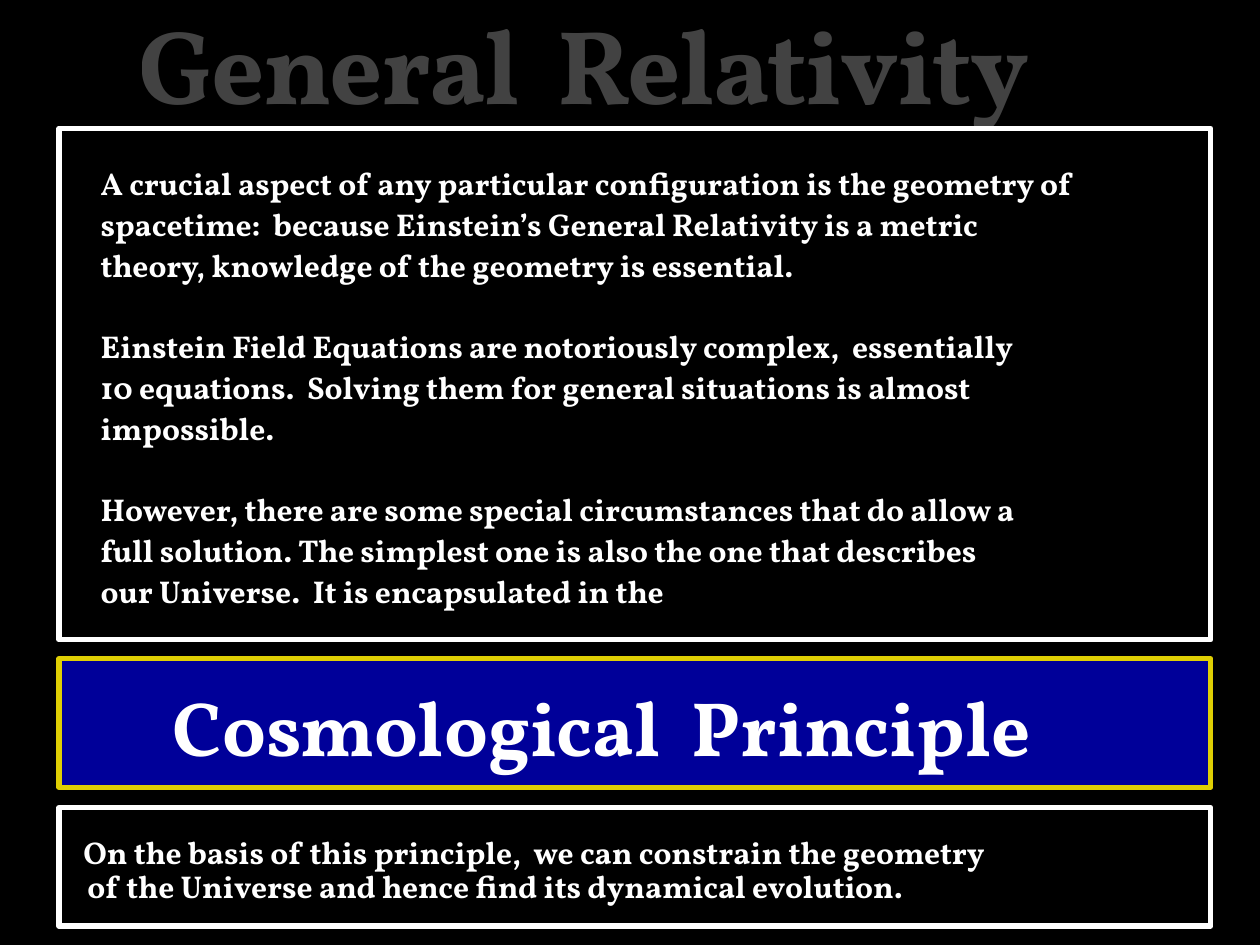
from pptx import Presentation
from pptx.dml.color import RGBColor
from pptx.enum import shapes as sh
from pptx.oxml import parse_xml
from pptx.oxml.ns import nsdecls
from pptx.util import Cm, Pt

BLACK = RGBColor(0x00, 0x00, 0x00)
WHITE = RGBColor(0xFF, 0xFF, 0xFF)
BLUE = RGBColor(0x00, 0x00, 0x99)
GOLD = RGBColor(0xDF, 0xCF, 0x04)

prs = Presentation()
prs.slide_width, prs.slide_height = Cm(25.4), Cm(19.05)
slide = prs.slides.add_slide(prs.slide_layouts[6])
slide.background.fill.solid()
slide.background.fill.fore_color.rgb = BLACK


def write(left, top, width, height, size, paras, pitch=None, gap=0):
    """Add a text box without insets; each paragraph is a list of lines."""
    box = slide.shapes.add_textbox(Cm(left), Cm(top), Cm(width), Cm(height))
    frame = box.text_frame
    frame.word_wrap = True
    frame.margin_left = frame.margin_right = 0
    frame.margin_top = frame.margin_bottom = 0
    for i, lines in enumerate(paras):
        para = frame.paragraphs[0] if i == 0 else frame.add_paragraph()
        if pitch:
            para.line_spacing = Pt(pitch)
        if i:
            para.space_before = Pt(gap)
        for j, line in enumerate(lines):
            if j:
                para.add_line_break()
            run = para.add_run()
            run.text = line
            run.font.name = "Vollkorn"
            run.font.size = Pt(size)
            run.font.bold = True
            run.font.color.rgb = WHITE
    return frame


# Faded title
title = write(2.79, 0, 21, 2.4, 60, [["General  Relativity"]])
props = title.paragraphs[0].runs[0].font._element
props.set("spc", "-100")
props.find(".//{*}srgbClr").append(
    parse_xml(f'<a:alpha {nsdecls("a")} val="25000"/>'))

# Framed panels: top, height, line, fill
panels = [
    (2.59, 10.31, WHITE, None),
    (13.28, 2.59, GOLD, BLUE),
    (16.28, 2.39, WHITE, None),
]
for top, height, line, fill in panels:
    panel = slide.shapes.add_shape(
        sh.MSO_SHAPE.RECTANGLE, Cm(1.19), Cm(top), Cm(23.22), Cm(height))
    panel.shadow.inherit = False
    panel.line.color.rgb = line
    panel.line.width = Pt(3)
    if fill is None:
        panel.fill.background()
    else:
        panel.fill.solid()
        panel.fill.fore_color.rgb = fill

# Panel texts
write(2.03, 3.24, 22, 9, 18, [
    ["A crucial aspect of any particular configuration is the geometry of",
     "spacetime:  because Einstein’s General Relativity is a metric",
     "theory, knowledge of the geometry is essential."],
    ["Einstein Field Equations are notoriously complex,  essentially",
     "10 equations.  Solving them for general situations is almost",
     "impossible."],
    ["However, there are some special circumstances that do allow a",
     "full solution. The simplest one is also the one that describes",
     "our Universe.  It is encapsulated in the"],
], pitch=23.4, gap=22.9)

write(3.48, 13.69, 19, 2.1, 44, [["Cosmological  Principle"]])

note = write(1.68, 16.87, 22, 1.5, 18, [
    ["On the basis of this principle,  we can constrain the geometry"],
    ["of the Universe and hence find its dynamical evolution."],
], pitch=19.4)
note.paragraphs[1]._p.get_or_add_pPr().set("marL", str(Cm(0.08)))

prs.save("out.pptx")
